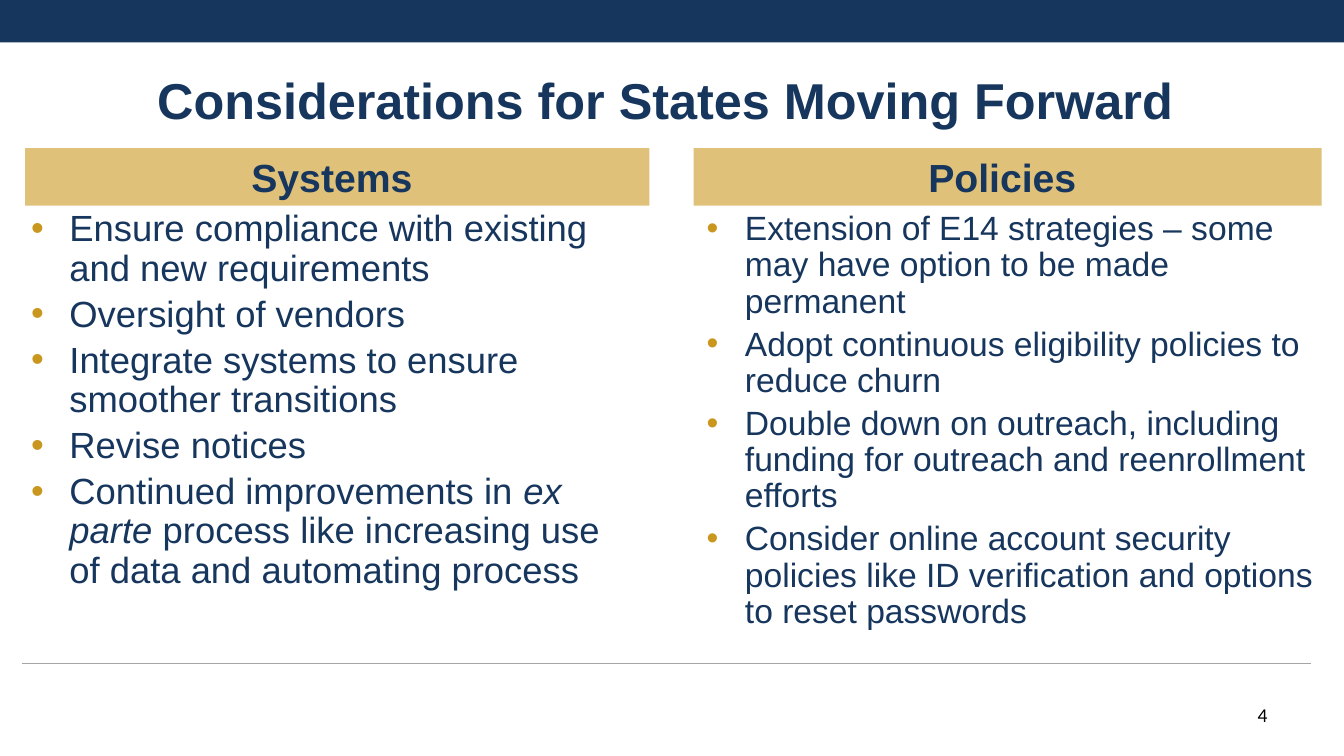
from dataclasses import dataclass

from lxml.etree import SubElement
from pptx import Presentation
from pptx.dml.color import RGBColor as RGB
from pptx.enum.shapes import MSO_CONNECTOR as Link, MSO_SHAPE as Kind
from pptx.enum.text import MSO_ANCHOR as Anchor, MSO_AUTO_SIZE as Fit, PP_ALIGN as Align
from pptx.oxml.ns import qn
from pptx.util import Inches, Pt


@dataclass(frozen=True)
class Theme:
    navy: RGB = RGB(0x17, 0x36, 0x5D)
    gold: RGB = RGB(0xCA, 0x96, 0x1D)
    dot: str = "C9961E"
    gray: RGB = RGB(0xA5, 0xA5, 0xA5)
    black: RGB = RGB(0, 0, 0)
    font: str = "Arial"
    title: int = 36
    head: int = 28
    page: int = 14


@dataclass(frozen=True)
class Box:
    left: float
    top: float
    width: float
    height: float

    def place(self) -> tuple:
        return tuple(map(Inches, (self.left, self.top, self.width, self.height)))


@dataclass(frozen=True)
class Column:
    """A headed list; asterisks in a point enclose italic words."""
    head: str
    bar: Box
    body: Box
    size: int
    points: tuple[str, ...]


THEME = Theme()

COLUMNS = (
    Column("Systems ", Box(0.25, 1.47, 6.19, 0.57), Box(-0.03, 2.04, 6.45, 4.37), 26, (
        "Ensure compliance with existing and new requirements",
        "Oversight of vendors",
        "Integrate systems to ensure smoother transitions",
        "Revise notices",
        "Continued improvements in *ex parte *process like increasing use "
        "of data and automating process",
    )),
    Column("Policies ", Box(6.88, 1.47, 6.23, 0.57), Box(6.67, 2.05, 6.45, 4.37), 24, (
        "Extension of E14 strategies – some may have option to be made permanent",
        "Adopt continuous eligibility policies to reduce churn",
        "Double down on outreach, including funding for outreach and reenrollment efforts",
        "Consider online account security policies like ID verification "
        "and options to reset passwords",
    )),
)


def add_dot(para) -> None:
    """Give a paragraph a gold bullet and a hanging indent."""
    props = para._p.get_or_add_pPr()
    props.set("marL", str(Inches(0.62)))
    props.set("indent", str(Inches(-0.38)))
    tint = SubElement(props, qn("a:buClr"))
    SubElement(tint, qn("a:srgbClr"), val=THEME.dot)
    SubElement(props, qn("a:buFont"), typeface=THEME.font)
    SubElement(props, qn("a:buChar"), char="•")


def write(shape, *lines: str, size: int, color: RGB = THEME.navy, font: str = THEME.font,
          bold: bool = False, align: Align = Align.LEFT, anchor: Anchor = Anchor.TOP,
          dots: bool = False) -> None:
    frame = shape.text_frame
    frame.word_wrap = True
    frame.auto_size = Fit.NONE
    frame.vertical_anchor = anchor
    frame.margin_left = frame.margin_right = Inches(0.1)
    frame.margin_top = frame.margin_bottom = Inches(0.05)
    for row, line in enumerate(lines):
        para = frame.add_paragraph() if row else frame.paragraphs[0]
        para.alignment = align
        if dots:
            add_dot(para)
            para.line_spacing = 0.9
            para.space_before = Pt(4.8 if row else 0)
        for part, text in enumerate(line.split("*")):
            run = para.add_run()
            run.text = text
            run.font.name = font
            run.font.size = Pt(size)
            run.font.bold = bold
            run.font.italic = part % 2 == 1
            run.font.color.rgb = color


def add_bar(slide, box: Box, color: RGB, alpha: int = 100):
    bar = slide.shapes.add_shape(Kind.RECTANGLE, *box.place())
    bar.shadow.inherit = False
    bar.line.fill.background()
    bar.fill.solid()
    bar.fill.fore_color.rgb = color
    if alpha < 100:
        tint = bar._element.spPr.find(qn("a:solidFill"))[0]
        SubElement(tint, qn("a:alpha"), val=str(alpha * 1000))
    return bar


def add_rule(slide) -> None:
    rule = slide.shapes.add_connector(
        Link.STRAIGHT, Inches(0.22), Inches(6.58), Inches(13), Inches(6.58))
    rule.line.color.rgb = THEME.gray
    rule.line.width = Pt(0.75)
    SubElement(rule._element.spPr, qn("a:effectLst"))


def add_column(slide, col: Column) -> None:
    body = slide.shapes.add_textbox(*col.body.place())
    write(body, *col.points, size=col.size, dots=True)
    bar = add_bar(slide, col.bar, THEME.gold, alpha=59)
    write(bar, col.head, size=THEME.head, bold=True,
          align=Align.CENTER, anchor=Anchor.MIDDLE)


def main() -> None:
    deck = Presentation()
    deck.slide_width, deck.slide_height = Inches(13.33), Inches(7.5)
    slide = deck.slides.add_slide(deck.slide_layouts[5])
    add_bar(slide, Box(0, 0, 13.33, 0.42), THEME.navy)
    add_rule(slide)
    title = slide.shapes.title
    title.left, title.top, title.width, title.height = Box(0.67, 0.42, 12, 1.13).place()
    write(title, "Considerations for States Moving Forward ", size=THEME.title,
          bold=True, align=Align.CENTER, anchor=Anchor.MIDDLE)
    for col in COLUMNS:
        add_column(slide, col)
    page = slide.shapes.add_textbox(*Box(11.67, 6.92, 1, 0.4).place())
    write(page, "4", size=THEME.page, color=THEME.black, font="Calibri", align=Align.RIGHT)
    deck.save("out.pptx")


if __name__ == "__main__":
    main()
